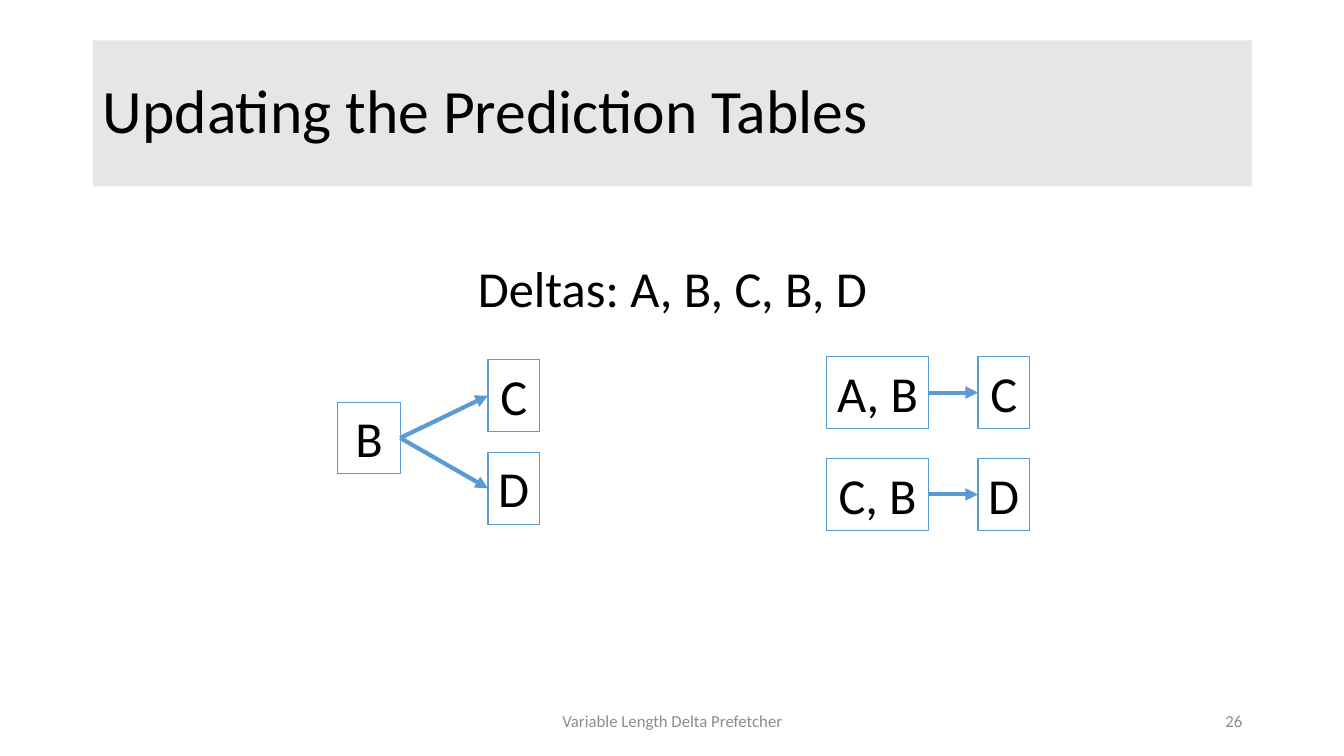
"""Build the slide on updating the prediction tables."""
from dataclasses import dataclass

from lxml.etree import SubElement
from pptx import Presentation
from pptx.dml.color import RGBColor
from pptx.enum.shapes import MSO_CONNECTOR
from pptx.enum.text import MSO_ANCHOR, MSO_AUTO_SIZE, PP_ALIGN
from pptx.oxml.ns import qn
from pptx.util import Inches, Pt

TITLE = "Updating the Prediction Tables"
DELTAS = "Deltas: A, B, C, B, D"
FOOTER = "Variable Length Delta Prefetcher"
PAGE = "26"
PREDICTIONS = [
    {"history": ("B", 3.35, 3.99, 0.62), "next": [("C", 4.84, 3.57), ("D", 4.84, 4.49)]},
    {"history": ("A, B", 8.2, 3.54, 1.01), "next": [("C", 9.7, 3.54)]},
    {"history": ("C, B", 8.2, 4.55, 1.01), "next": [("D", 9.7, 4.55)]},
]
NEXT_WIDTH = 0.51
DELTA_HEIGHT = 0.71
MARGIN, CONTENT_WIDTH = 0.92, 11.5
FOOTER_TOP, FOOTER_HEIGHT = 6.95, 0.4


@dataclass(frozen=True)
class Theme:
    """Colours, font and sizes of the slide."""
    ink: RGBColor = RGBColor.from_string("000000")
    muted: RGBColor = RGBColor.from_string("8C8C8C")
    band: RGBColor = RGBColor.from_string("E7E6E6")
    accent: RGBColor = RGBColor.from_string("5B9BD5")
    font: str = "Calibri"
    title: Pt = Pt(44)
    body: Pt = Pt(36)
    footer: Pt = Pt(12)
    border: Pt = Pt(0.75)
    arrow: Pt = Pt(3)


THEME = Theme()


def apply(target, values):
    """Set each named attribute on the target."""
    for name, value in values.items():
        setattr(target, name, value)


def write(holder, text, size, color=THEME.ink, align=PP_ALIGN.CENTER,
          anchor=MSO_ANCHOR.TOP, spacing=1.0, wrap=True):
    """Fill a shape with one formatted paragraph."""
    frame = holder.text_frame
    apply(frame, {"text": text, "auto_size": MSO_AUTO_SIZE.NONE,
                  "word_wrap": wrap, "vertical_anchor": anchor})
    paragraph = frame.paragraphs[0]
    apply(paragraph, {"alignment": align, "line_spacing": spacing})
    font = paragraph.runs[0].font
    apply(font, {"name": THEME.font, "size": size})
    font.color.rgb = color


def add_text(slide, text, box, size, **style):
    """Add a text box at left, top, width and height in inches."""
    holder = slide.shapes.add_textbox(*map(Inches, box))
    write(holder, text, size, **style)
    return holder


def add_delta(slide, label, left, top, width=NEXT_WIDTH):
    """Add an outlined box holding deltas."""
    delta = add_text(slide, label, (left, top, width, DELTA_HEIGHT), THEME.body, wrap=False)
    apply(delta.line, {"width": THEME.border})
    delta.line.color.rgb = THEME.accent
    return delta


def add_arrow(slide, history, following):
    """Connect a history box to the delta that follows it."""
    arrow = slide.shapes.add_connector(MSO_CONNECTOR.STRAIGHT, 0, 0, 0, 0)
    arrow.begin_connect(history, 3)
    arrow.end_connect(following, 1)
    arrow.line.width = THEME.arrow
    arrow.line.color.rgb = THEME.accent
    SubElement(arrow.line._get_or_add_ln(), qn("a:tailEnd"), type="triangle")
    SubElement(arrow._element.spPr, qn("a:effectLst"))


def main():
    """Lay out the slide and save it."""
    deck = Presentation()
    apply(deck, {"slide_width": Inches(13.33), "slide_height": Inches(7.5)})
    slide = deck.slides.add_slide(deck.slide_layouts[5])

    title = slide.shapes.title
    apply(title, {"left": Inches(MARGIN), "top": Inches(0.4),
                  "width": Inches(CONTENT_WIDTH), "height": Inches(1.45)})
    title.fill.solid()
    title.fill.fore_color.rgb = THEME.band
    write(title, TITLE, THEME.title, align=PP_ALIGN.LEFT, anchor=MSO_ANCHOR.MIDDLE, spacing=0.9)

    add_text(slide, DELTAS, (MARGIN, 2.57, CONTENT_WIDTH, 0.51), THEME.body, spacing=0.9)
    for text, left, width, align in [(FOOTER, 4.42, 4.5, PP_ALIGN.CENTER),
                                     (PAGE, 9.42, 3, PP_ALIGN.RIGHT)]:
        add_text(slide, text, (left, FOOTER_TOP, width, FOOTER_HEIGHT), THEME.footer,
                 color=THEME.muted, align=align, anchor=MSO_ANCHOR.MIDDLE)

    for prediction in PREDICTIONS:
        history = add_delta(slide, *prediction["history"])
        for following in prediction["next"]:
            add_arrow(slide, history, add_delta(slide, *following))

    deck.save("out.pptx")


if __name__ == "__main__":
    main()
